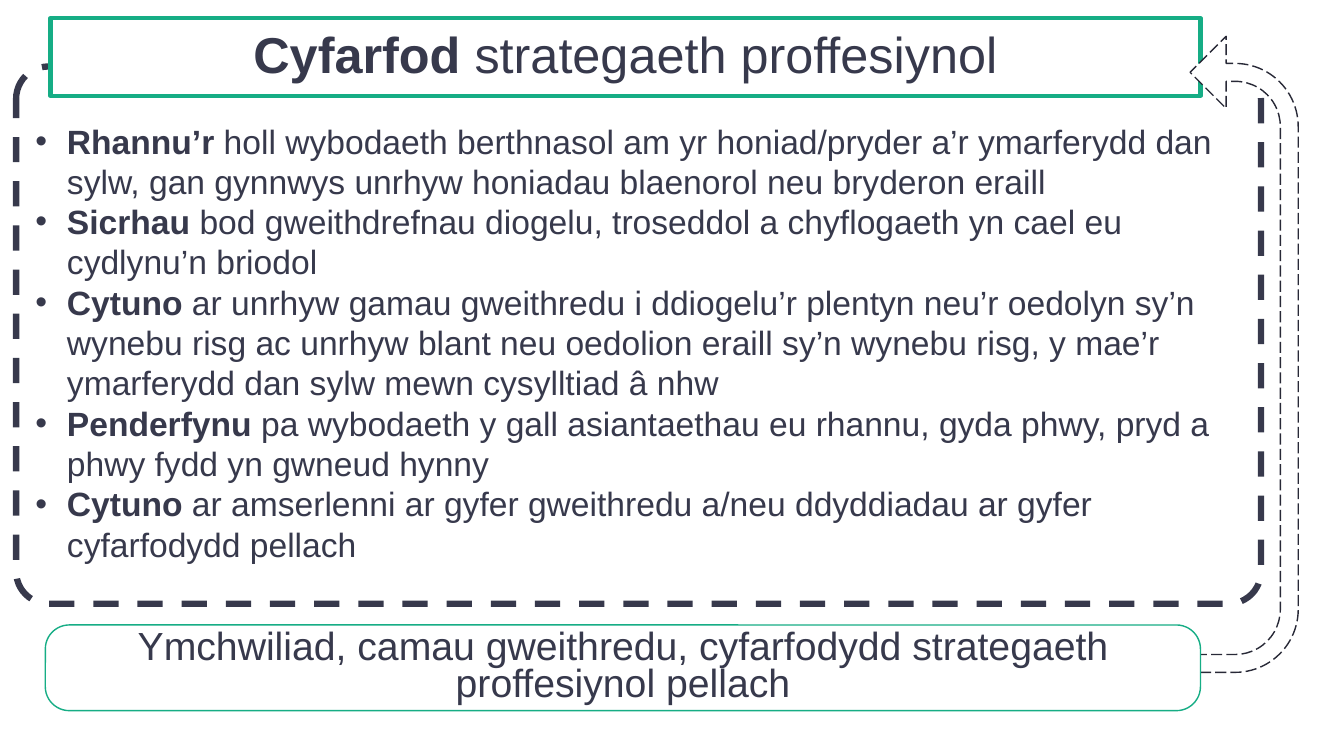
"""Build the professional strategy meeting slide on a grid of 160 by 90 cells."""
from lxml import etree
from pptx import Presentation
from pptx import util as u
from pptx.dml.color import RGBColor
from pptx.enum import dml, shapes, text
from pptx.oxml import parse_xml
from pptx.oxml.ns import nsdecls, qn

COLOURS = {"ink": "37394C", "green": "16AD85", "arrow": "282937", "white": "FFFFFF"}
CELL = u.Inches(1) // 12


def style(sp, box, colour, width, dash=None):
    sp.left, sp.top, sp.width, sp.height = [round(n * CELL) for n in box]
    sp.fill.solid()
    sp.fill.fore_color.rgb = RGBColor.from_string(COLOURS["white"])
    sp.line.color.rgb = RGBColor.from_string(COLOURS[colour])
    sp.line.width = u.Pt(width)
    if dash:
        sp.line.dash_style = dash
    sp.shadow.inherit = False


def add_run(p, words, size, bold=False):
    r = p.add_run()
    r.text = words
    r.font.name, r.font.size, r.font.bold = "Arial", u.Pt(size), bold
    r.font.color.rgb = RGBColor.from_string(COLOURS["ink"])


prs = Presentation()
prs.slide_width, prs.slide_height = 160 * CELL, 90 * CELL
s = prs.slides.add_slide(prs.slide_layouts[5])
title = s.shapes.title

panel = s.shapes.add_shape(shapes.MSO_SHAPE.ROUNDED_RECTANGLE, 0, 0, CELL, CELL)
style(panel, (1.92, 7.92, 148.2, 63.96), "ink", 4.5, dml.MSO_LINE.DASH)
panel.adjustments[0] = 0.06
tf = panel.text_frame
tf.word_wrap = True
tf.vertical_anchor = text.MSO_ANCHOR.TOP
tf.margin_top = round(5.3 * CELL)
points = [
    ("Rhannu’r ", "holl wybodaeth berthnasol am yr honiad/pryder a’r ymarferydd dan sylw, "
     "gan gynnwys unrhyw honiadau blaenorol neu bryderon eraill"),
    ("Sicrhau ", "bod gweithdrefnau diogelu, troseddol a chyflogaeth yn cael eu cydlynu’n briodol"),
    ("Cytuno ", "ar unrhyw gamau gweithredu i ddiogelu’r plentyn neu’r oedolyn sy’n wynebu risg "
     "ac unrhyw blant neu oedolion eraill sy’n wynebu risg, y mae’r ymarferydd dan sylw "
     "mewn cysylltiad â nhw"),
    ("Penderfynu ", "pa wybodaeth y gall asiantaethau eu rhannu, gyda phwy, pryd a phwy fydd "
     "yn gwneud hynny"),
    ("Cytuno ", "ar amserlenni ar gyfer gweithredu a/neu ddyddiadau ar gyfer cyfarfodydd pellach"),
]
indent = round(3.75 * CELL)
for i, (lead, rest) in enumerate(points):
    p = tf.add_paragraph() if i else tf.paragraphs[0]
    p.alignment = text.PP_ALIGN.LEFT
    pPr = p._p.get_or_add_pPr()
    pPr.set("marL", str(indent))
    pPr.set("indent", str(-indent))
    colour = etree.SubElement(pPr, qn("a:buClr"))
    etree.SubElement(colour, qn("a:srgbClr"), val=COLOURS["ink"])
    etree.SubElement(pPr, qn("a:buFont"), typeface="Arial")
    etree.SubElement(pPr, qn("a:buChar"), char="•")
    add_run(p, lead, 24, True)
    add_run(p, rest, 24)

style(title, (6, 2.16, 136.92, 9.24), "green", 3)
title._element.spPr.find(qn("a:xfrm")).addnext(parse_xml(
    f'<a:prstGeom {nsdecls("a")} prst="roundRect"><a:avLst>'
    '<a:gd name="adj" fmla="val 18000"/></a:avLst></a:prstGeom>'))
panel._element.addnext(title._element)

arrow = s.shapes.add_shape(shapes.MSO_SHAPE.U_TURN_ARROW, 0, 0, CELL, CELL)
style(arrow, (108.12, 33.6, 75.72, 17.16), "arrow", 1, dml.MSO_LINE.LONG_DASH)
for i, share in enumerate((0.124, 0.25, 0.25, 0.438, 0.75)):
    arrow.adjustments[i] = share
arrow.rotation = 90
arrow._element.spPr.find(qn("a:xfrm")).set("flipH", "1")

follow_up = s.shapes.add_shape(shapes.MSO_SHAPE.ROUNDED_RECTANGLE, 0, 0, CELL, CELL)
style(follow_up, (5.4, 74.4, 137.52, 10.2), "green", 1)
follow_up.adjustments[0] = 0.28

labels = [
    (title, 36, 0.9, [("Cyfarfod ", True), ("strategaeth proffesiynol", False)]),
    (follow_up, 28, 0.8,
     [("Ymchwiliad, camau gweithredu, cyfarfodydd strategaeth proffesiynol pellach", False)]),
]
for sp, size, spacing, runs in labels:
    tf = sp.text_frame
    tf.word_wrap = True
    tf.auto_size = text.MSO_AUTO_SIZE.NONE
    tf.vertical_anchor = text.MSO_ANCHOR.MIDDLE
    p = tf.paragraphs[0]
    p.alignment = text.PP_ALIGN.CENTER
    p.line_spacing = spacing
    for words, bold in runs:
        add_run(p, words, size, bold)

prs.save("out.pptx")
